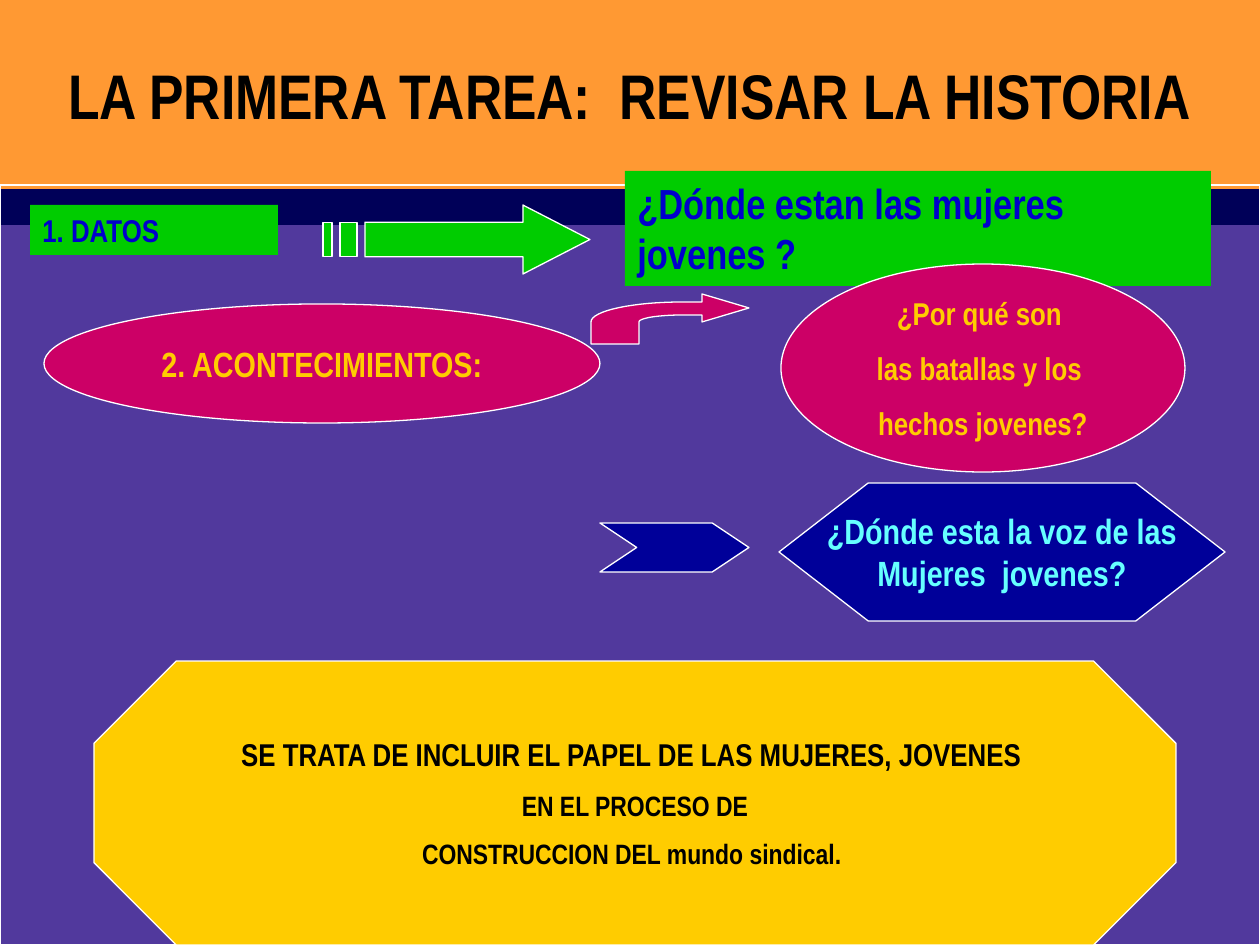
from dataclasses import dataclass
from math import cos, pi, sin

from pptx import Presentation
from pptx.dml.color import RGBColor
from pptx.enum.shapes import MSO_SHAPE
from pptx.enum.text import MSO_ANCHOR, MSO_AUTO_SIZE, PP_ALIGN
from pptx.util import Pt

RECT, OVAL = MSO_SHAPE.RECTANGLE, MSO_SHAPE.OVAL
HEX, CHEVRON = MSO_SHAPE.FLOWCHART_PREPARATION, MSO_SHAPE.CHEVRON
OCTAGON = MSO_SHAPE.OCTAGON
LEFT, CENTER = PP_ALIGN.LEFT, PP_ALIGN.CENTER
TOP, MIDDLE = MSO_ANCHOR.TOP, MSO_ANCHOR.MIDDLE
GROW = MSO_AUTO_SIZE.SHAPE_TO_FIT_TEXT
SCALE = 914400 / 126
WIDE, HIGH = 1260, 945


@dataclass(frozen=True)
class Theme:
    font: str = "Arial Narrow"
    back: str = "51399D"
    band: str = "000058"
    head: str = "FF9933"
    line: str = "FFFFFF"
    dark: str = "000000"
    green: str = "00CC00"
    blue: str = "0000CC"
    pink: str = "CC0066"
    gold: str = "FFCC00"
    navy: str = "000099"
    aqua: str = "66FFFF"
    title: int = 36
    large: int = 24
    mid: int = 20
    body: int = 18
    small: int = 16
    gap: float = 0.54


THEME = Theme()


def emu(px):
    return round(px * SCALE)


def rgb(code):
    return RGBColor.from_string(code)


def paint(shape, fill, line):
    shape.shadow.inherit = False
    if fill:
        shape.fill.solid()
        shape.fill.fore_color.rgb = rgb(fill)
    else:
        shape.fill.background()
    if line:
        shape.line.color.rgb = rgb(line)
        shape.line.width = Pt(0.75)
    else:
        shape.line.fill.background()
    return shape


def add_form(slide, kind, box, fill, line=None):
    shape = slide.shapes.add_shape(kind, *map(emu, box))
    return paint(shape, fill, line)


def add_path(slide, box, loops, fill):
    left, top = box[:2]
    loops = [[(emu(left + x), emu(top + y)) for x, y in loop] for loop in loops]
    pen = slide.shapes.build_freeform(*loops[0][0])
    for i, loop in enumerate(loops):
        if i:
            pen.move_to(*loop[0])
        pen.add_line_segments(loop[1:], close=True)
    return paint(pen.convert_to_shape(), fill, THEME.line)


def write(shape, lines, color, align=CENTER, anchor=MIDDLE, wrap=False, gap=0):
    frame = shape.text_frame
    frame.word_wrap = wrap
    frame.vertical_anchor = anchor
    for i, (text, size) in enumerate(lines):
        para = frame.add_paragraph() if i else frame.paragraphs[0]
        para.alignment = align
        if i and gap:
            para.space_before = Pt(round(size * gap, 1))
        run = para.add_run()
        run.text = text
        font = run.font
        font.name, font.size, font.bold = THEME.font, Pt(size), True
        font.color.rgb = rgb(color)


def add_head(slide, box):
    left, top, wide, high = box
    add_form(slide, RECT, (left, top + 66, wide, 159), THEME.band)
    title = add_form(slide, RECT, (left, top, wide, 189), THEME.head)
    write(title, [("LA PRIMERA TAREA:  REVISAR LA HISTORIA", THEME.title)], THEME.dark)
    add_form(slide, RECT, (left, top + 185, wide, high - 185), None, THEME.line)


def add_label(slide, box, text, size):
    shape = add_form(slide, RECT, box, THEME.green)
    write(shape, [(text, size)], THEME.blue, LEFT, TOP, True)
    shape.text_frame.auto_size = GROW


def bar(left, right, top, low):
    return [(left, top), (right, top), (right, low), (left, low)]


def add_stripes(slide, box):
    wide, high = box[2:]
    top, low, neck = high / 4, high * 3 / 4, wide - 67
    arrow = [(neck, 0), (neck, top), (42, top), (42, low),
             (neck, low), (neck, high), (wide, high / 2)]
    loops = [arrow, bar(17, 34, top, low), bar(0, 9, top, low)]
    add_path(slide, box, loops, THEME.green)


def arc(mid, wide, high, steps=16):
    turns = [pi / 2 * i / steps for i in range(steps + 1)]
    return [(mid[0] - wide * sin(t), mid[1] - high * cos(t)) for t in turns]


def add_bend(slide, box):
    wide, high = box[2:]
    neck, mid = wide - 47, (92, 28)
    outer, inner = arc(mid, 92, 20), arc(mid, 44, 7)[::-1]
    loop = [(wide, 14), (neck, 0), (neck, 8), *outer, (0, high),
            (48, high), *inner, (neck, 21), (neck, 28)]
    add_path(slide, box, [loop], THEME.pink)


def add_data(slide, box):
    left, top = box[:2]
    add_label(slide, (left, top + 34, 248, 50), "1. DATOS", THEME.body)
    add_label(slide, (left + 595, top, 586, 115),
              "¿Dónde estan las mujeres jovenes ?", THEME.large)
    add_stripes(slide, (left + 293, top + 34, 267, 69))


def add_events(slide, box):
    left, top = box[:2]
    why = add_form(slide, OVAL, (left + 737, top, 404, 208), THEME.pink, THEME.line)
    lines = ["¿Por qué son ", "las batallas y los ", "hechos jovenes?"]
    write(why, [(text, THEME.body) for text in lines], THEME.gold, gap=THEME.gap)
    event = add_form(slide, OVAL, (left, top + 40, 556, 119), THEME.pink, THEME.line)
    write(event, [("2. ACONTECIMIENTOS:", THEME.mid)], THEME.gold)
    add_bend(slide, (left + 547, top + 30, 158, 50))


def add_voice(slide, box):
    left, top, wide, high = box
    voice = add_form(slide, HEX, (left + 179, top, wide - 179, high),
                     THEME.navy, THEME.line)
    lines = ["¿Dónde esta la voz de las", "Mujeres  jovenes?"]
    write(voice, [(text, THEME.mid) for text in lines], THEME.aqua)
    mark = add_form(slide, CHEVRON, (left, top + 40, 149, 49), THEME.navy, THEME.line)
    mark.adjustments[0] = 0.75


def add_goal(slide, box):
    goal = add_form(slide, OCTAGON, box, THEME.gold, THEME.line)
    goal.adjustments[0] = 0.29
    lines = [("SE TRATA DE INCLUIR EL PAPEL DE LAS MUJERES, JOVENES ", THEME.body),
             (" EN EL PROCESO DE ", THEME.small),
             ("CONSTRUCCION DEL mundo sindical. ", THEME.small)]
    write(goal, lines, THEME.dark, gap=THEME.gap)


def main():
    deck = Presentation()
    deck.slide_width, deck.slide_height = emu(WIDE), emu(HIGH)
    slide = deck.slides.add_slide(deck.slide_layouts[6])
    slide.background.fill.solid()
    slide.background.fill.fore_color.rgb = rgb(THEME.back)
    add_head(slide, (0, 0, WIDE, HIGH))
    add_data(slide, (30, 171, 1181, 115))
    add_events(slide, (44, 264, 1141, 208))
    add_voice(slide, (600, 483, 625, 138))
    add_goal(slide, (94, 661, 1082, 284))
    deck.save("out.pptx")


if __name__ == "__main__":
    main()
